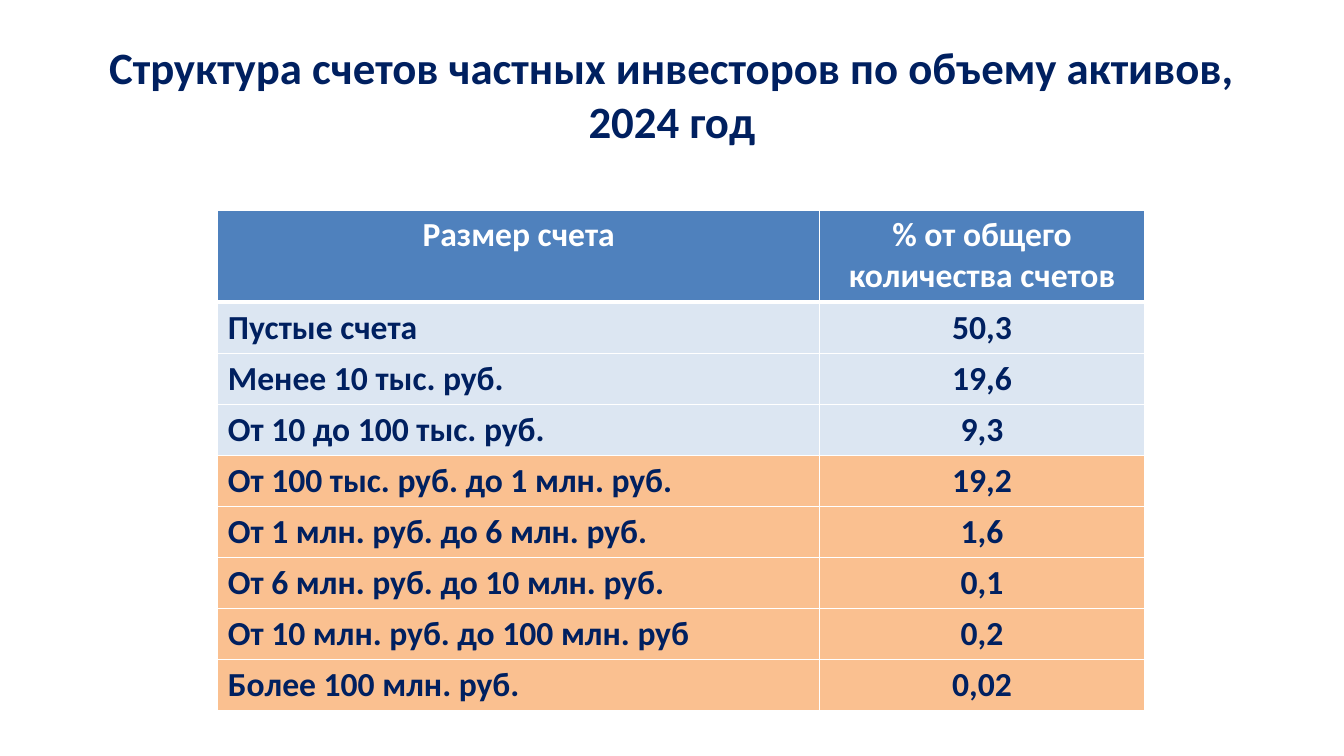
"""Builds a slide with a table of private investor accounts by asset size."""
from lxml.etree import SubElement
from pptx import Presentation
from pptx.dml.color import RGBColor
from pptx.enum.text import MSO_ANCHOR as ANCHOR, PP_ALIGN as ALIGN
from pptx.oxml.ns import qn
from pptx.util import Pt

TITLE = "Структура счетов частных инвесторов по объему активов, 2024 год"
HEADER = ("Размер счета", "% от общего количества счетов")
SMALL = [
    ("Пустые счета", "50,3"),
    ("Менее 10 тыс. руб.", "19,6"),
    ("От 10 до 100 тыс. руб.", "9,3"),
]
LARGE = [
    ("От 100 тыс. руб. до 1 млн. руб.", "19,2"),
    ("От 1 млн. руб. до 6 млн. руб.", "1,6"),
    ("От 6 млн. руб. до 10 млн. руб.", "0,1"),
    ("От 10 млн. руб. до 100 млн. руб", "0,2"),
    ("Более 100 млн. руб.", "0,02"),
]
NAVY, WHITE, BLUE, PALE, ORANGE = "002060", "FFFFFF", "4F81BD", "DCE6F2", "FAC090"
COL_WIDTHS = (429.8, 232.2)
HEADER_HEIGHT, ROW_HEIGHT = 65.8, 36.5


def rgb(color):
    return RGBColor.from_string(color)


def write(tf, text, size, color, align):
    p = tf.paragraphs[0]
    p.alignment = align
    r = p.add_run()
    r.text = text
    for name, value in {"name": "Calibri", "size": Pt(size), "bold": True}.items():
        setattr(r.font, name, value)
    r.font.color.rgb = rgb(color)


def set_borders(cell, widths):
    tc_pr = cell._tc.get_or_add_tcPr()
    for i, (side, width) in enumerate(widths.items()):
        ln = SubElement(tc_pr, qn(f"a:ln{side}"), w=str(Pt(width)))
        SubElement(SubElement(ln, qn("a:solidFill")), qn("a:srgbClr"), val=WHITE)
        tc_pr.insert(i, ln)


def add_title(s):
    tf = s.shapes.add_textbox(Pt(48), Pt(21.6), Pt(864), Pt(90)).text_frame
    tf.word_wrap = True
    tf.vertical_anchor = ANCHOR.MIDDLE
    write(tf, TITLE, 32, NAVY, ALIGN.CENTER)


def add_accounts_table(s):
    rows = [(HEADER, BLUE, WHITE)]
    rows += [(row, PALE, NAVY) for row in SMALL]
    rows += [(row, ORANGE, NAVY) for row in LARGE]
    heights = [HEADER_HEIGHT] + [ROW_HEIGHT] * (len(rows) - 1)
    table = s.shapes.add_table(len(rows), len(COL_WIDTHS), Pt(155.6), Pt(150),
                               Pt(sum(COL_WIDTHS)), Pt(sum(heights))).table
    for col, width in zip(table.columns, COL_WIDTHS):
        col.width = Pt(width)
    for i, (texts, fill, color) in enumerate(rows):
        table.rows[i].height = Pt(heights[i])
        borders = {"L": 1, "R": 1, "T": 3 if i == 1 else 1, "B": 3 if i == 0 else 1}
        for j, text in enumerate(texts):
            cell = table.cell(i, j)
            cell.fill.solid()
            cell.fill.fore_color.rgb = rgb(fill)
            align = ALIGN.LEFT if i and j == 0 else ALIGN.CENTER
            write(cell.text_frame, text, 24, color, align)
            set_borders(cell, borders)


def main():
    prs = Presentation()
    prs.slide_width, prs.slide_height = Pt(960), Pt(540)
    s = prs.slides.add_slide(prs.slide_layouts[6])
    add_title(s)
    add_accounts_table(s)
    prs.save("out.pptx")


if __name__ == "__main__":
    main()
